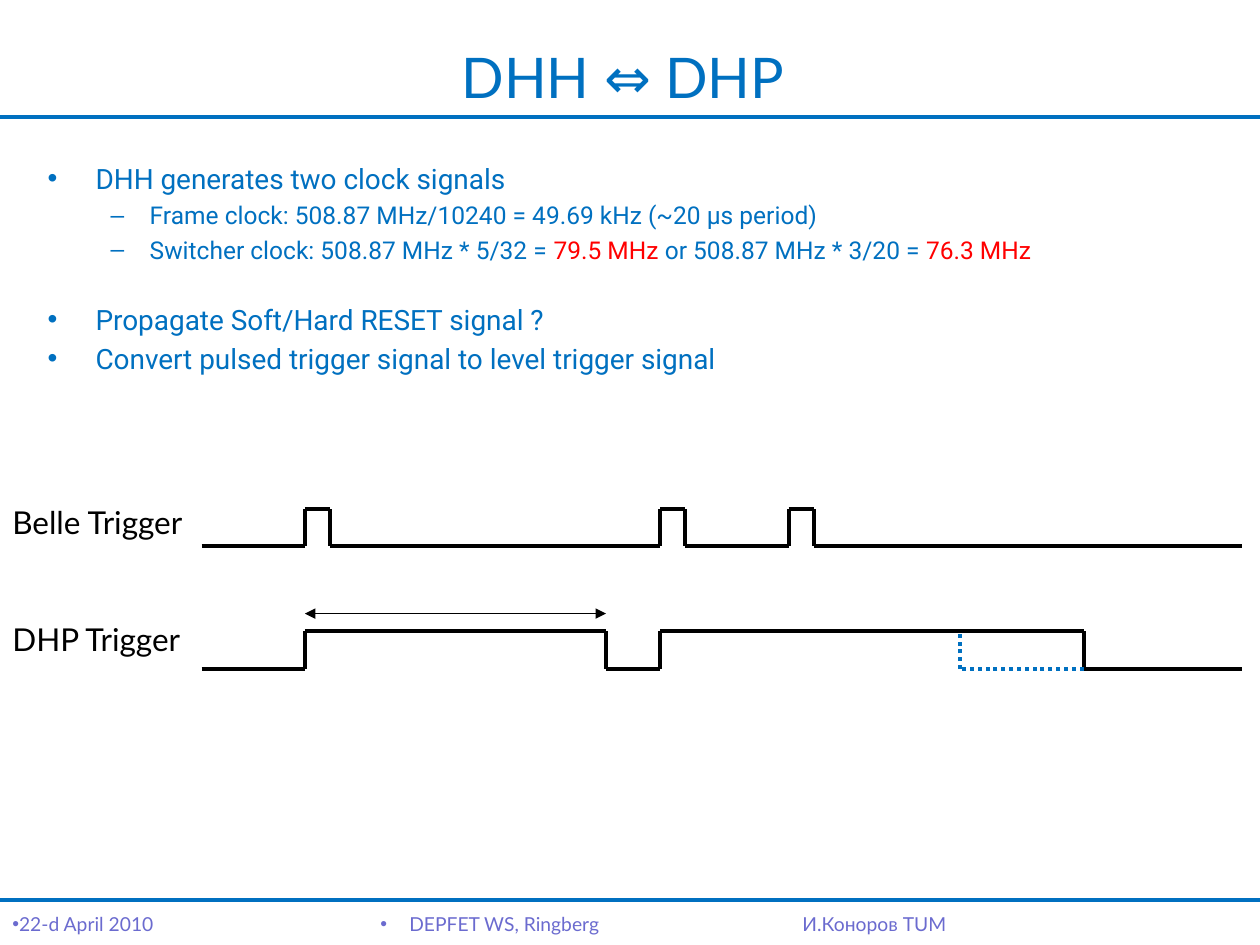
from itertools import pairwise

from pptx import Presentation
from pptx import util as u
from pptx.dml.color import RGBColor
from pptx.enum import dml, shapes, text
from pptx.oxml.ns import qn
from lxml import etree

BLUE, RED, BLACK, VIOLET = "0070C0", "FF0000", "000000", "6B6BCF"


def color(hex_string):
    return RGBColor.from_string(hex_string)


def write(para, words, font="Lato", size=18, fill=BLACK):
    span = para.add_run()
    span.text = words
    span.font.name = font
    span.font.size = u.Pt(size)
    span.font.color.rgb = color(fill)


def set_bullet(para, mark, margin=0, hang=0):
    """Call after the paragraph spacing is set, as the bullet must follow it."""
    props = para._p.get_or_add_pPr()
    props.set("marL", str(u.Inches(margin)))
    props.set("indent", str(-u.Inches(hang)))
    etree.SubElement(props, qn("a:buFont")).set("typeface", "Arial")
    etree.SubElement(props, qn("a:buChar")).set("char", mark)


class SlideBuilder:
    def __init__(self, deck):
        self.slide = deck.slides.add_slide(deck.slide_layouts[5])

    def title(self, words, left, top, width, height):
        title = self.slide.shapes.title
        title.left, title.top = u.Inches(left), u.Inches(top)
        title.width, title.height = u.Inches(width), u.Inches(height)
        title.text_frame.vertical_anchor = text.MSO_ANCHOR.MIDDLE
        para = title.text_frame.paragraphs[0]
        para.alignment = text.PP_ALIGN.CENTER
        write(para, words, size=32, fill=BLUE)

    def text_box(self, left, top, width, height, wrap=True):
        box = self.slide.shapes.add_textbox(
            u.Inches(left), u.Inches(top), u.Inches(width), u.Inches(height))
        box.text_frame.word_wrap = wrap
        return box.text_frame

    def label(self, words, left, top, width, height):
        frame = self.text_box(left, top, width, height, wrap=False)
        frame.auto_size = text.MSO_AUTO_SIZE.SHAPE_TO_FIT_TEXT
        write(frame.paragraphs[0], words)

    def footer(self, words, left, width, mark=None, indent=0):
        para = self.text_box(left, 7.19, width, 0.31).paragraphs[0]
        if mark:
            set_bullet(para, mark, indent, indent)
        write(para, words, size=11, fill=VIOLET)

    def bullet_list(self, items, left, top, width, height):
        """Each item is (level, space before in points, [(words, colour), ...])."""
        styles = [(16, "•", 0.38, 0.38), (14, "–", 0.81, 0.31)]
        frame = self.text_box(left, top, width, height)
        for index, (level, space, spans) in enumerate(items):
            para = frame.add_paragraph() if index else frame.paragraphs[0]
            size, mark, margin, hang = styles[level]
            para.level = level
            para.space_before = u.Pt(space)
            set_bullet(para, mark, margin, hang)
            for words, fill in spans:
                write(para, words, font="Roboto", size=size, fill=fill)

    def line(self, start, end, fill=BLACK, width=2.25, dash=None, arrows=False):
        points = [u.Inches(value) for value in (*start, *end)]
        line = self.slide.shapes.add_connector(shapes.MSO_CONNECTOR.STRAIGHT, *points)
        line.line.color.rgb = color(fill)
        line.line.width = u.Pt(width)
        if dash:
            line.line.dash_style = dash
        if arrows:
            outline = line.line._get_or_add_ln()
            for tag in ("a:headEnd", "a:tailEnd"):
                etree.SubElement(outline, qn(tag)).set("type", "triangle")
        etree.SubElement(line._element.spPr, qn("a:effectLst"))

    def waveform(self, start, end, low, high, pulses):
        """Draw a signal that is high during each (rise, fall) pulse."""
        points = [(start, low)]
        for rise, fall in pulses:
            points += [(rise, low), (rise, high), (fall, high), (fall, low)]
        points.append((end, low))
        for a, b in pairwise(points):
            self.line(a, b)


def main():
    deck = Presentation()
    deck.slide_width, deck.slide_height = u.Inches(10), u.Inches(7.5)
    page = SlideBuilder(deck)

    for y in (7.14, 0.93):
        page.line((0, y), (10, y), fill=BLUE)
    page.title("DHH ⇔ DHP", 0.39, 0.3, 9.11, 0.61)
    page.bullet_list([
        (0, 3, [("DHH generates two clock signals", BLUE)]),
        (1, 3, [("Frame clock: 508.87 MHz/10240 = 49.69 kHz (~20 μs period)", BLUE)]),
        (1, 3, [("Switcher clock: 508.87 MHz * 5/32 = ", BLUE), ("79.5 MHz ", RED),
                ("or 508.87 MHz * 3/20 = ", BLUE), ("76.3 MHz", RED)]),
        (0, 22, [("Propagate Soft/Hard RESET signal ?", BLUE)]),
        (0, 3, [("Convert pulsed trigger signal to level trigger signal", BLUE)]),
    ], 0.28, 1.23, 9.58, 2.4)

    page.footer("22-d April 2010", 0, 1.33, mark="•")
    page.footer("DEPFET WS, Ringberg", 2.92, 3, mark="•", indent=0.23)
    page.footer("И.Коноров TUM", 6.27, 3.1)

    start, end = 1.6, 9.86
    first, second, third = 2.42, 5.24, 6.26
    pulse, level = 0.2, 2.39
    low, high = 5.31, 5.01
    last_fall = 8.6
    page.waveform(start, end, 4.33, 4.04,
                  [(rise, rise + pulse) for rise in (first, second, third)])
    page.waveform(start, end, low, high,
                  [(first, first + level), (second, last_fall)])

    # Where the second level would end without the third trigger
    early_fall = 7.62
    dots = dml.MSO_LINE.ROUND_DOT
    page.line((early_fall, low), (early_fall, high), fill=BLUE, dash=dots)
    page.line((last_fall, low), (early_fall, low), fill=BLUE, dash=dots)
    page.line((first, 4.87), (first + level, 4.87), width=1, arrows=True)

    page.label("Belle Trigger", 0, 3.94, 1.63, 0.4)
    page.label("DHP Trigger", 0, 4.87, 1.6, 0.4)
    deck.save("out.pptx")


if __name__ == "__main__":
    main()
